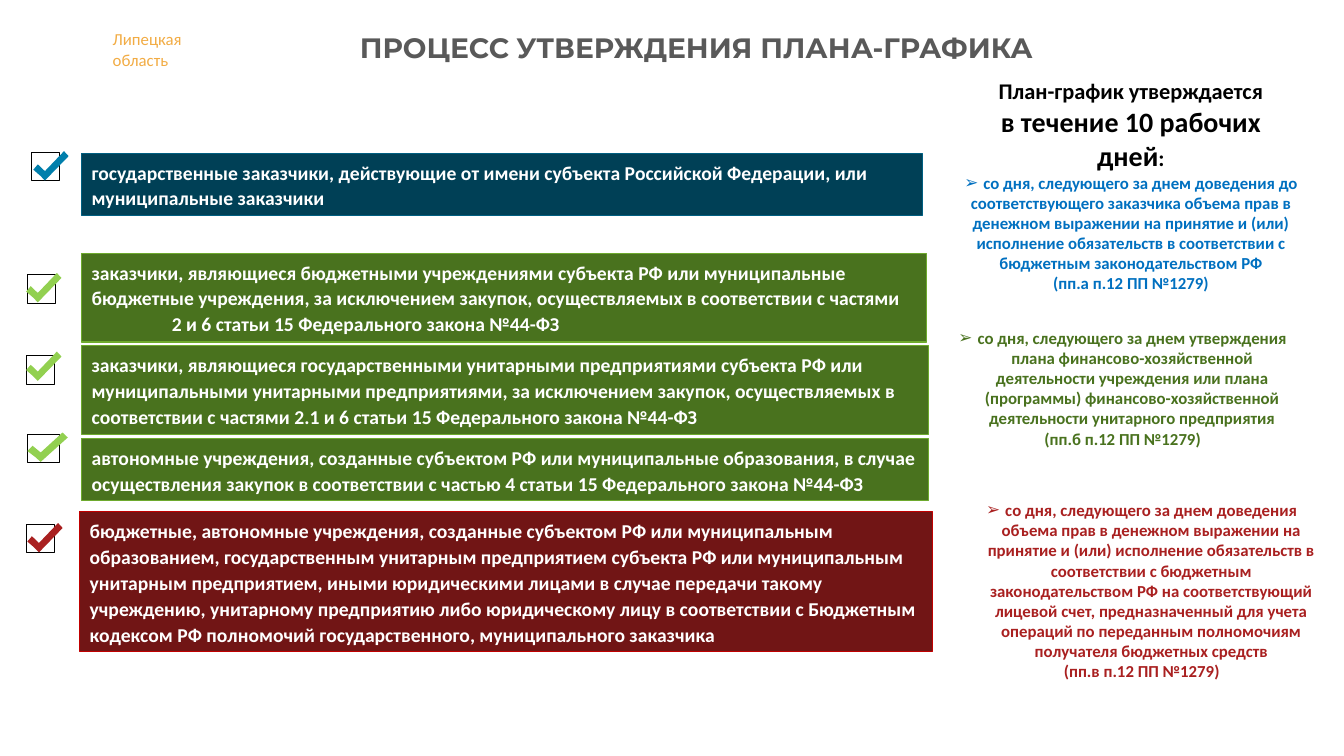
from dataclasses import dataclass

from lxml import etree
from pptx import Presentation
from pptx import util as u
from pptx.dml.color import RGBColor
from pptx.enum import shapes, text
from pptx.oxml.ns import qn


@dataclass(frozen=True)
class Theme:
    body_font: str = "Calibri"
    title_font: str = "Montserrat"
    title_size: int = 20
    title_gap_size: int = 18
    lead_size: int = 16
    row_size: int = 14
    note_size: int = 12
    outline: float = 0.75
    white: str = "FFFFFF"
    black: str = "000000"
    grey: str = "595959"
    orange: str = "F2AC44"
    note_blue: str = "0070C0"
    green: str = "49721E"
    red: str = "A92020"
    # customer group: (bar fill, bar line, tick)
    state: tuple = ("004056", "005F81", "007FAC")
    budget: tuple = ("49721E", "6EAA2E", "92D050")
    transferred: tuple = ("711515", "C00000", "A92020")


THEME = Theme()
CHECKBOX_SIDE, TICK_HEIGHT = 0.71, 0.74
# Tick outline in percent of its frame
TICK = [(13, 45), (33, 68), (87, 0), (100, 17), (33, 100), (20, 84), (0, 63)]

# text paragraphs, bar (left, top, width, height),
# checkbox (left, top, width), tick (left, top, width), group colours
CUSTOMERS = [
    (["государственные заказчики, действующие от имени субъекта Российской "
      "Федерации, или муниципальные заказчики"],
     (2.06, 3.86, 21.18, 1.57), (0.79, 3.84, 0.71), (0.84, 3.81, 0.89), THEME.state),
    (["заказчики, являющиеся бюджетными учреждениями субъекта РФ или муниципальные "
      "бюджетные учреждения, за исключением закупок, осуществляемых в соответствии "
      "с частями",
      "2 и 6 статьи 15 Федерального закона №44-ФЗ"],
     (2.06, 6.38, 21.29, 2.24), (0.69, 6.93, 0.71), (0.66, 6.88, 0.89), THEME.budget),
    (["заказчики, являющиеся государственными унитарными предприятиями субъекта РФ "
      "или муниципальными унитарными предприятиями, за исключением закупок, "
      "осуществляемых в соответствии с частями 2.1 и 6 статьи 15 Федерального "
      "закона №44-ФЗ"],
     (2.06, 8.71, 21.34, 2.24), (0.66, 8.97, 0.71), (0.66, 8.86, 0.89), THEME.budget),
    (["автономные учреждения, созданные субъектом РФ или муниципальные образования, "
      "в случае осуществления закупок в соответствии с частью 4 статьи 15 "
      "Федерального закона №44-ФЗ"],
     (2.06, 11.05, 21.34, 1.57), (0.69, 10.95, 0.81), (0.69, 10.9, 1.02), THEME.budget),
    (["бюджетные, автономные учреждения, созданные субъектом РФ или муниципальным "
      "образованием, государственным унитарным предприятием субъекта РФ или "
      "муниципальным унитарным предприятием, иными юридическими лицами в случае "
      "передачи такому учреждению, унитарному предприятию либо юридическому лицу в "
      "соответствии с Бюджетным кодексом РФ полномочий государственного, "
      "муниципального заказчика"],
     (2.01, 12.9, 21.49, 3.51), (0.66, 13.21, 0.71), (0.69, 13.18, 0.89),
     THEME.transferred),
]

DEADLINES = [
    (["со дня, следующего за днем доведения до",
      "соответствующего заказчика объема прав в денежном выражении на принятие и "
      "(или) исполнение обязательств в соответствии с бюджетным законодательством РФ",
      "(пп.а п.12 ПП №1279)"],
     (23.83, 4.22, 9.35, 3.33), THEME.note_blue),
    (["со дня, следующего за днем утверждения плана финансово-хозяйственной "
      "деятельности учреждения или плана (программы) финансово-хозяйственной "
      "деятельности унитарного предприятия",
      "(пп.б п.12 ПП №1279)"],
     (23.62, 8.13, 9.35, 3.84), THEME.green),
    (["со дня, следующего за днем доведения объема прав в денежном выражении на "
      "принятие и (или) исполнение обязательств в соответствии с бюджетным "
      "законодательством РФ на соответствующий лицевой счет, предназначенный для "
      "учета операций по переданным полномочиям получателя бюджетных средств",
      "(пп.в п.12 ПП №1279)"],
     (24.1, 12.47, 9.35, 4.88), THEME.red),
]


def cm(values):
    return [u.Cm(value) for value in values]


def apply(target, formats):
    for name, value in formats.items():
        setattr(target, name, value)


class SlideBuilder:
    def __init__(self, slide, theme):
        self.slide = slide
        self.theme = theme

    def fill_text(self, frame, paragraphs, color, font=None, bold=True,
                  frame_format=None, **paragraph_format):
        """Fill a frame; each paragraph is a list of (text, size) runs."""
        apply(frame, {"word_wrap": True, "vertical_anchor": text.MSO_ANCHOR.TOP,
                      "auto_size": text.MSO_AUTO_SIZE.SHAPE_TO_FIT_TEXT,
                      **(frame_format or {})})
        for index, runs in enumerate(paragraphs):
            paragraph = frame.paragraphs[0] if index == 0 else frame.add_paragraph()
            apply(paragraph, paragraph_format)
            for words, size in runs:
                run = paragraph.add_run()
                run.text = words
                apply(run.font, {"name": font or self.theme.body_font,
                                 "size": u.Pt(size), "bold": bold})
                run.font.color.rgb = RGBColor.from_string(color)

    def title(self, runs, place):
        title = self.slide.shapes.title
        apply(title, dict(zip(("left", "top", "width", "height"), cm(place))))
        self.fill_text(title.text_frame, [runs], self.theme.grey, self.theme.title_font,
                       frame_format={"vertical_anchor": text.MSO_ANCHOR.MIDDLE,
                                     "auto_size": text.MSO_AUTO_SIZE.NONE},
                       alignment=text.PP_ALIGN.CENTER)

    def label(self, paragraphs, place, color, **formats):
        frame = self.slide.shapes.add_textbox(*cm(place)).text_frame
        self.fill_text(frame, paragraphs, color, **formats)
        return frame

    def rectangle(self, place, line, fill=None):
        box = self.slide.shapes.add_shape(shapes.MSO_SHAPE.RECTANGLE, *cm(place))
        box.shadow.inherit = False
        if fill:
            box.fill.solid()
            box.fill.fore_color.rgb = RGBColor.from_string(fill)
        else:
            box.fill.background()
        box.line.color.rgb = RGBColor.from_string(line)
        box.line.width = u.Pt(self.theme.outline)
        return box

    def customer_bar(self, paragraphs, place, fill, line):
        frame = self.rectangle(place, line, fill).text_frame
        self.fill_text(frame, [[(words, self.theme.row_size)] for words in paragraphs],
                       self.theme.white, alignment=text.PP_ALIGN.LEFT, line_spacing=1.1)
        for continuation in frame.paragraphs[1:]:
            continuation._p.get_or_add_pPr().set("marL", str(u.Cm(2.02)))

    def tick(self, left, top, width, color):
        scale = (u.Cm(width) / 100, u.Cm(TICK_HEIGHT) / 100)
        outline = self.slide.shapes.build_freeform(*TICK[0], scale=scale)
        outline.add_line_segments(TICK[1:], close=True)
        mark = outline.convert_to_shape(u.Cm(left), u.Cm(top))
        mark.shadow.inherit = False
        mark.fill.solid()
        mark.fill.fore_color.rgb = RGBColor.from_string(color)
        mark.line.fill.background()

    def deadline(self, paragraphs, place, color):
        """Centred note whose first paragraph carries an arrow bullet."""
        frame = self.label([[(words, self.theme.note_size)] for words in paragraphs],
                           place, color, alignment=text.PP_ALIGN.CENTER)
        properties = frame.paragraphs[0]._p.get_or_add_pPr()
        indent = u.Cm(0.48)
        properties.set("marL", str(indent))
        properties.set("indent", str(-indent))
        etree.SubElement(properties, qn("a:buFont")).set("typeface", self.theme.body_font)
        etree.SubElement(properties, qn("a:buChar")).set("char", "➢")


def main():
    deck = Presentation()
    deck.slide_width, deck.slide_height = cm((33.87, 19.05))
    page = SlideBuilder(deck.slides.add_slide(deck.slide_layouts[5]), THEME)

    page.label([[(word, THEME.note_size)] for word in ("Липецкая", "область")],
               (2.59, 0.61, 2.31, 1.27), THEME.orange, bold=False)
    page.title([("ПРОЦЕСС", THEME.title_size), (" ", THEME.title_gap_size),
                ("УТВЕРЖДЕНИЯ ПЛАНА-ГРАФИКА", THEME.title_size)],
               (4.85, -0.08, 25.4, 2.54))

    for paragraphs, bar, checkbox, tick, (fill, line, tick_color) in CUSTOMERS:
        page.customer_bar(paragraphs, bar, fill, line)
        page.rectangle((*checkbox, CHECKBOX_SIDE), THEME.black)
        page.tick(*tick, tick_color)

    page.label([[("План-график утверждается", THEME.lead_size)],
                [("в течение 10 рабочих дней", THEME.title_size),
                 (":", THEME.lead_size)]],
               (24.18, 1.83, 8.64, 2.64), THEME.black, alignment=text.PP_ALIGN.CENTER)
    for paragraphs, place, color in DEADLINES:
        page.deadline(paragraphs, place, color)

    deck.save("out.pptx")


if __name__ == "__main__":
    main()
